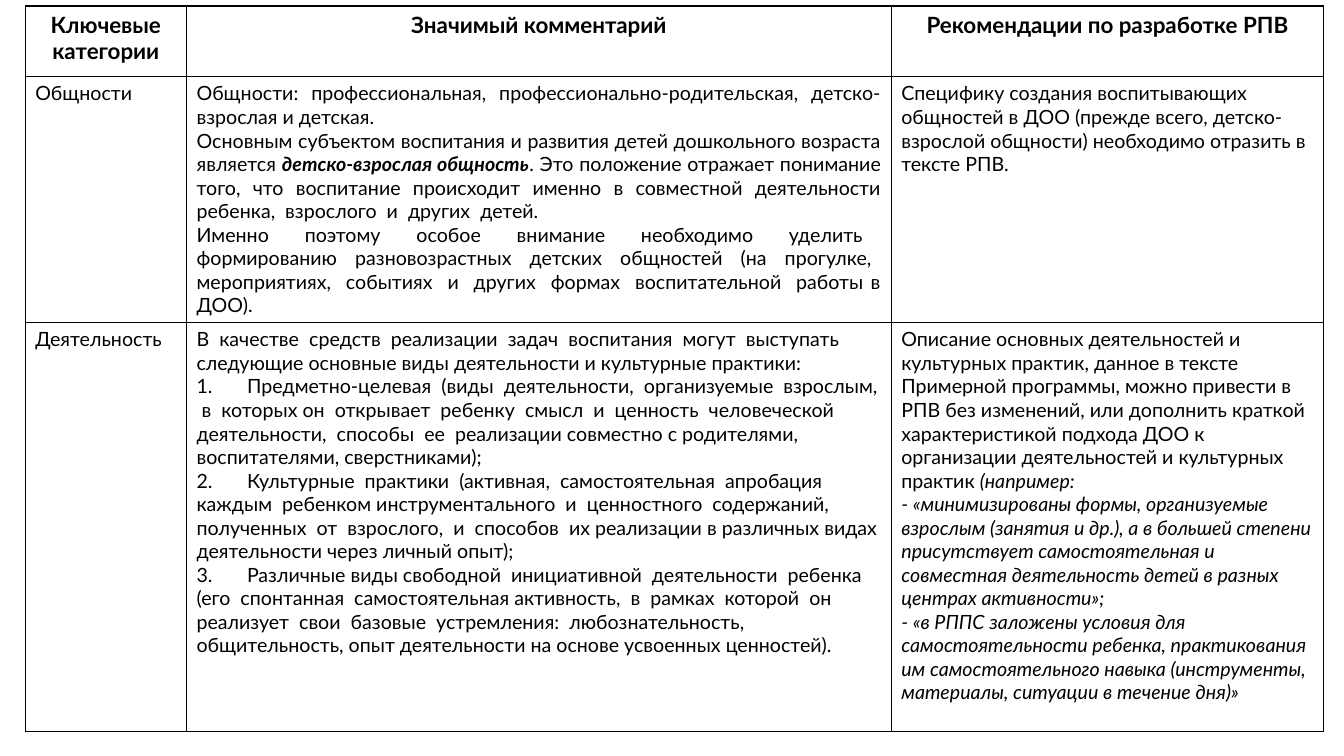
import pptx
import pptx.dml.color
import pptx.enum.text
import pptx.oxml
import pptx.oxml.ns
import pptx.util

Inches = pptx.util.Inches
ALIGN = pptx.enum.text.PP_ALIGN
BLACK = pptx.dml.color.RGBColor(0x00, 0x00, 0x00)
WHITE = pptx.dml.color.RGBColor(0xFF, 0xFF, 0xFF)
FONT = "Lato"
HEADER_SIZE = 16
BODY_SIZE = 14
PLAIN, BOLD, ITALIC, BOLD_ITALIC = (False, False), (True, False), (False, True), (True, True)
COLUMN_WIDTHS = (1.6, 6.99, 4.29)
ROW_HEIGHTS = (0.7, 2.44, 4.06)
TABLE_BOX = (0.25, 0.06, sum(COLUMN_WIDTHS), sum(ROW_HEIGHTS))

HEADERS = ("Ключевые категории", "Значимый комментарий", "Рекомендации по разработке РПВ")

COMMUNITY_COMMENT = [
    [("Общности: профессиональная, профессионально-родительская, детско-взрослая и детская.", PLAIN)],
    [
        ("Основным субъектом воспитания и развития детей дошкольного возраста является ", PLAIN),
        ("детско-взрослая общность", BOLD_ITALIC),
        (". Это положение отражает понимание того, что воспитание происходит именно в совместной "
         "деятельности ребенка,  взрослого  и  других  детей.", PLAIN),
    ],
    [("Именно  поэтому  особое  внимание  необходимо  уделить  формированию  разновозрастных  "
      "детских  общностей  (на  прогулке,  мероприятиях,  событиях  и  других  формах  "
      "воспитательной  работы в ДОО).", PLAIN)],
]
COMMUNITY_ADVICE = [
    [("Специфику создания воспитывающих общностей в ДОО (прежде всего, детско-взрослой общности) "
      "необходимо отразить в тексте РПВ.", PLAIN)],
]
ACTIVITY_COMMENT = [
    [("В  качестве  средств  реализации  задач  воспитания  могут  выступать следующие основные "
      "виды деятельности и культурные практики:", PLAIN)],
    [("1.\tПредметно-целевая  (виды  деятельности,  организуемые  взрослым,  в  которых он  "
      "открывает  ребенку  смысл  и  ценность  человеческой  деятельности,  способы  ее  "
      "реализации совместно с родителями, воспитателями, сверстниками);", PLAIN)],
    [("2.\tКультурные  практики  (активная,  самостоятельная  апробация  каждым  ребенком "
      "инструментального  и  ценностного  содержаний,  полученных  от  взрослого,  и  способов  "
      "их реализации в различных видах деятельности через личный опыт);", PLAIN)],
    [("3.\tРазличные виды свободной  инициативной  деятельности  ребенка  (его  спонтанная  "
      "самостоятельная активность,  в  рамках  которой  он  реализует  свои  базовые  "
      "устремления:  любознательность, общительность, опыт деятельности на основе усвоенных "
      "ценностей).", PLAIN)],
]
ACTIVITY_ADVICE = [
    [
        ("Описание основных деятельностей и культурных практик, данное в тексте Примерной "
         "программы, можно привести в РПВ без изменений, или дополнить краткой характеристикой "
         "подхода ДОО к организации деятельностей и культурных практик ", PLAIN),
        ("(например:", ITALIC),
    ],
    [("- «минимизированы формы, организуемые взрослым (занятия и др.), а в большей степени "
      "присутствует самостоятельная и совместная деятельность детей в разных центрах "
      "активности»;", ITALIC)],
    [("- «в РППС заложены условия для самостоятельности ребенка, практикования им "
      "самостоятельного навыка (инструменты, материалы, ситуации в течение дня)»", ITALIC)],
]

LEFT, CENTER, JUSTIFY = ALIGN.LEFT, ALIGN.CENTER, ALIGN.JUSTIFY
ROWS = [
    [([[(header, BOLD)]], CENTER, HEADER_SIZE) for header in HEADERS],
    [
        ([[("Общности", PLAIN)]], LEFT, BODY_SIZE),
        (COMMUNITY_COMMENT, JUSTIFY, BODY_SIZE),
        (COMMUNITY_ADVICE, LEFT, BODY_SIZE),
    ],
    [
        ([[("Деятельность", PLAIN)]], LEFT, BODY_SIZE),
        (ACTIVITY_COMMENT, LEFT, BODY_SIZE),
        (ACTIVITY_ADVICE, LEFT, BODY_SIZE),
    ],
]


def border_cell(cell):
    properties = cell._tc.get_or_add_tcPr()
    for position, side in enumerate(("lnL", "lnR", "lnT", "lnB")):
        border = pptx.oxml.parse_xml(
            f'<a:{side} {pptx.oxml.ns.nsdecls("a")} w="{pptx.util.Pt(1)}">'
            f'<a:solidFill><a:srgbClr val="{BLACK}"/></a:solidFill></a:{side}>'
        )
        properties.insert(position, border)


def fill_cell(cell, paragraphs, alignment, size):
    cell.fill.solid()
    cell.fill.fore_color.rgb = WHITE
    border_cell(cell)
    frame = cell.text_frame
    for index, spans in enumerate(paragraphs):
        para = frame.add_paragraph() if index else frame.paragraphs[0]
        para.alignment = alignment
        for words, (bold, italic) in spans:
            span = para.add_run()
            span.text = words
            span.font.name = FONT
            span.font.size = pptx.util.Pt(size)
            span.font.color.rgb = BLACK
            span.font.bold = bold
            span.font.italic = italic


def add_category_table(page, box):
    left, top, width, height = (Inches(length) for length in box)
    table = page.shapes.add_table(len(ROWS), len(HEADERS), left, top, width, height).table
    table.first_row = False
    table.horz_banding = False
    for column, share in zip(table.columns, COLUMN_WIDTHS):
        column.width = Inches(share * box[2] / sum(COLUMN_WIDTHS))
    for row, share, contents in zip(table.rows, ROW_HEIGHTS, ROWS):
        row.height = Inches(share * box[3] / sum(ROW_HEIGHTS))
        for cell, content in zip(row.cells, contents):
            fill_cell(cell, *content)


def main():
    deck = pptx.Presentation()
    deck.slide_width = Inches(13.33)
    deck.slide_height = Inches(7.5)
    page = deck.slides.add_slide(deck.slide_layouts[6])
    add_category_table(page, TABLE_BOX)
    deck.save("out.pptx")


if __name__ == "__main__":
    main()
